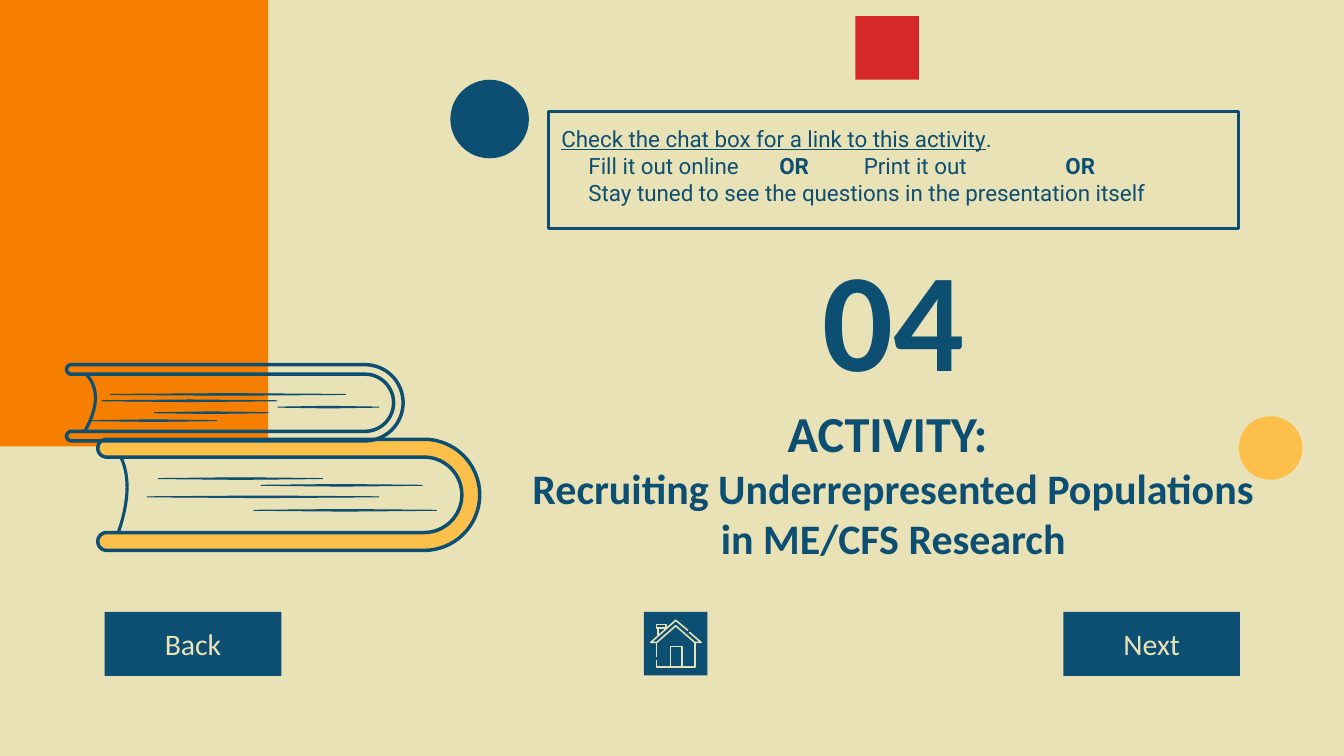
import math
from lxml import etree
from pptx import Presentation
from pptx import util as u
from pptx.dml.color import RGBColor
from pptx.enum import shapes, text
from pptx.oxml import ns

NAVY, SAND, GOLD = "0C4F72", "EAE2B7", "FCBF49"
ORANGE, RED = "F77F00", "D62828"
RECT, OVAL = shapes.MSO_SHAPE.RECTANGLE, shapes.MSO_SHAPE.OVAL
MID, TOP = text.MSO_ANCHOR.MIDDLE, text.MSO_ANCHOR.TOP
CENTER, LEFT = text.PP_ALIGN.CENTER, text.PP_ALIGN.LEFT


def hue(code):
    return RGBColor.from_string(code)


def paint(shape, fill=None, line=None, width=1):
    shape.shadow.inherit = False
    if fill:
        shape.fill.solid()
        shape.fill.fore_color.rgb = hue(fill)
    else:
        shape.fill.background()
    if line:
        shape.line.color.rgb = hue(line)
        shape.line.width = u.Pt(width)
    else:
        shape.line.fill.background()
    return shape


def block(slide, kind, box, **look):
    shape = slide.shapes.add_shape(kind, *map(u.Cm, box))
    return paint(shape, **look)


def outline(slide, points, close=False, **look):
    spots = [(u.Cm(x), u.Cm(y)) for x, y in points]
    path = slide.shapes.build_freeform(*spots[0])
    path.add_line_segments(spots[1:], close=close)
    return paint(path.convert_to_shape(), **look)


def write(shape, paras, anchor=MID, align=CENTER, color=NAVY, **base):
    """Each paragraph is a list of (words, format changes); "\\n" breaks a line."""
    frame = shape.text_frame
    frame.word_wrap = True
    frame.vertical_anchor = anchor
    for side in ("left", "right", "top", "bottom"):
        setattr(frame, "margin_" + side, u.Cm(0.33))
    for i, runs in enumerate(paras):
        para = frame.add_paragraph() if i else frame.paragraphs[0]
        para.alignment = align
        for words, extra in runs:
            if words == "\n":
                para.add_line_break()
                continue
            run = para.add_run()
            run.text = words
            run.font.color.rgb = hue(color)
            for key, val in {**base, **extra}.items():
                setattr(run.font, key, val)
    return frame


def title(slide, box, runs, size):
    shape = slide.shapes.add_textbox(*map(u.Cm, box))
    write(shape, [runs], name="Calibri", size=u.Pt(size), bold=True)


def button(slide, left, label):
    shape = block(slide, RECT, (left, 15.42, 4.45, 1.61), fill=NAVY)
    write(shape, [[(label, {})]], color=SAND, name="Calibri", size=u.Pt(21.3))


def tabs(para, stops):
    props = para._p.get_or_add_pPr()
    stop_list = etree.SubElement(props, ns.qn("a:tabLst"))
    for stop in stops:
        etree.SubElement(stop_list, ns.qn("a:tab"), pos=str(u.Cm(stop)), algn="l")


def arc(x, y, r, start, end, steps=32):
    turns = [math.radians(start + (end - start) * i / steps)
             for i in range(steps + 1)]
    return [(x + r * math.cos(t), y + r * math.sin(t)) for t in turns]


def curve(a, b, c, d, steps=16):
    """Points of a cubic curve from a to d."""
    spots = []
    for i in range(steps + 1):
        t = i / steps
        parts = ((1 - t) ** 3, 3 * t * (1 - t) ** 2, 3 * t * t * (1 - t), t ** 3)
        spots.append(tuple(sum(k * p[n] for k, p in zip(parts, (a, b, c, d)))
                           for n in (0, 1)))
    return spots


def book(slide, left, x, y, outer, inner, edge, streaks, fill=None):
    """Spine bends round (x, y); edge is the curved side of the pages."""
    outline(slide, curve(*edge), line=NAVY, width=2.25)
    for start, end, row in streaks:
        mid = (start + end) / 2
        outline(slide, [(start, row), (mid, row - 0.02), (end, row), (mid, row + 0.02)],
                close=True, fill=NAVY, line=NAVY, width=0.75)
    cap, gap = (outer - inner) / 2, (outer + inner) / 2
    cover = (arc(x, y, outer, -90, 90) + arc(left, y + gap, cap, 90, 270)
             + arc(x, y, inner, 90, -90) + arc(left, y - gap, cap, 90, 270))
    outline(slide, cover, close=True, fill=fill, line=NAVY, width=2.5)


def house(slide):
    block(slide, RECT, (16.23, 15.42, 1.6, 1.6), fill=NAVY)
    roof = [(17.37, 15.93), (17.67, 16.19), (17.51, 16.19), (17.03, 15.77),
            (16.55, 16.19), (16.4, 16.19), (17.03, 15.63), (17.34, 15.89)]
    walls = [(16.55, 16.64), (16.55, 16.81), (17.51, 16.81), (17.51, 16.19)]
    side = [(16.55, 16.19), (16.55, 16.56)]
    door = [(16.9, 16.79), (16.9, 16.29), (17.19, 16.29), (17.19, 16.79)]
    stack = [(16.59, 16), (16.59, 15.82), (16.76, 15.82), (16.76, 15.87)]
    lid = [(16.55, 15.74), (16.78, 15.74), (16.78, 15.82), (16.55, 15.82),
           (16.55, 15.74)]
    for part in (roof, walls, side, door, stack, lid):
        outline(slide, part, line=SAND, width=1.1)


def main():
    deck = Presentation()
    deck.slide_width, deck.slide_height = u.Cm(33.87), u.Cm(19.05)
    slide = deck.slides.add_slide(deck.slide_layouts[6])
    slide.background.fill.solid()
    slide.background.fill.fore_color.rgb = hue(SAND)

    # Section number and orange panel
    title(slide, (15.34, 5.89, 14.35, 4.11), [("04", {})], 100)
    block(slide, RECT, (0, 0, 6.76, 11.25), fill=ORANGE)

    # Stack of books
    book(slide, 2.69, 10.69, 12.47, 1.4, 0.95,
         ((2.92, 11.3), (3.3, 11.84), (3.3, 12.62), (2.9, 13.64)),
         ((3.71, 9.55, 12.52), (6.58, 10.64, 12.23),
          (6.4, 11, 12.86), (3.99, 8.13, 12.06)), fill=GOLD)
    book(slide, 1.8, 9.2, 10.15, 0.96, 0.72,
         ((2.16, 9.42), (2.49, 9.75), (2.49, 10.24), (2.15, 10.85)),
         ((2.79, 8.71, 9.94), (2.57, 6.98, 10.1), (3.89, 6.76, 10.4),
          (2.29, 5.46, 10.6), (7.01, 9.55, 10.26)))

    # Loose shapes
    block(slide, RECT, (21.56, 0.41, 1.6, 1.6), fill=RED)
    block(slide, OVAL, (11.35, 2.01, 1.98, 1.98), fill=NAVY)
    block(slide, OVAL, (31.22, 10.49, 1.6, 1.6), fill=GOLD)

    # Navigation
    button(slide, 2.64, "Back")
    house(slide)
    button(slide, 26.8, "Next")

    # Instructions
    note = block(slide, RECT, (13.82, 2.82, 17.4, 2.95), line=NAVY, width=2.25)
    bold = {"bold": True}
    frame = write(note, [
        [("Check the chat box for a link to this activity", {"underline": True}),
         (".", {})],
        [("\tFill it out online\t", {}), ("OR", bold),
         ("\tPrint it out\t", {}), ("OR", bold)],
        [("\tStay tuned to see the questions in the presentation itself", {})],
    ], anchor=TOP, align=LEFT, name="Roboto", size=u.Pt(16))
    for para in frame.paragraphs[1:]:
        tabs(para, (0.68, 5.49, 7.62, 12.7))

    # Activity title
    title(slide, (12.57, 10.77, 19.89, 2.79),
          [("ACTIVITY: ", {"size": u.Pt(36)}), ("\n", {}),
           ("Recruiting Underrepresented Populations in ME/CFS Research", {})], 30)

    deck.save("out.pptx")


if __name__ == "__main__":
    main()
